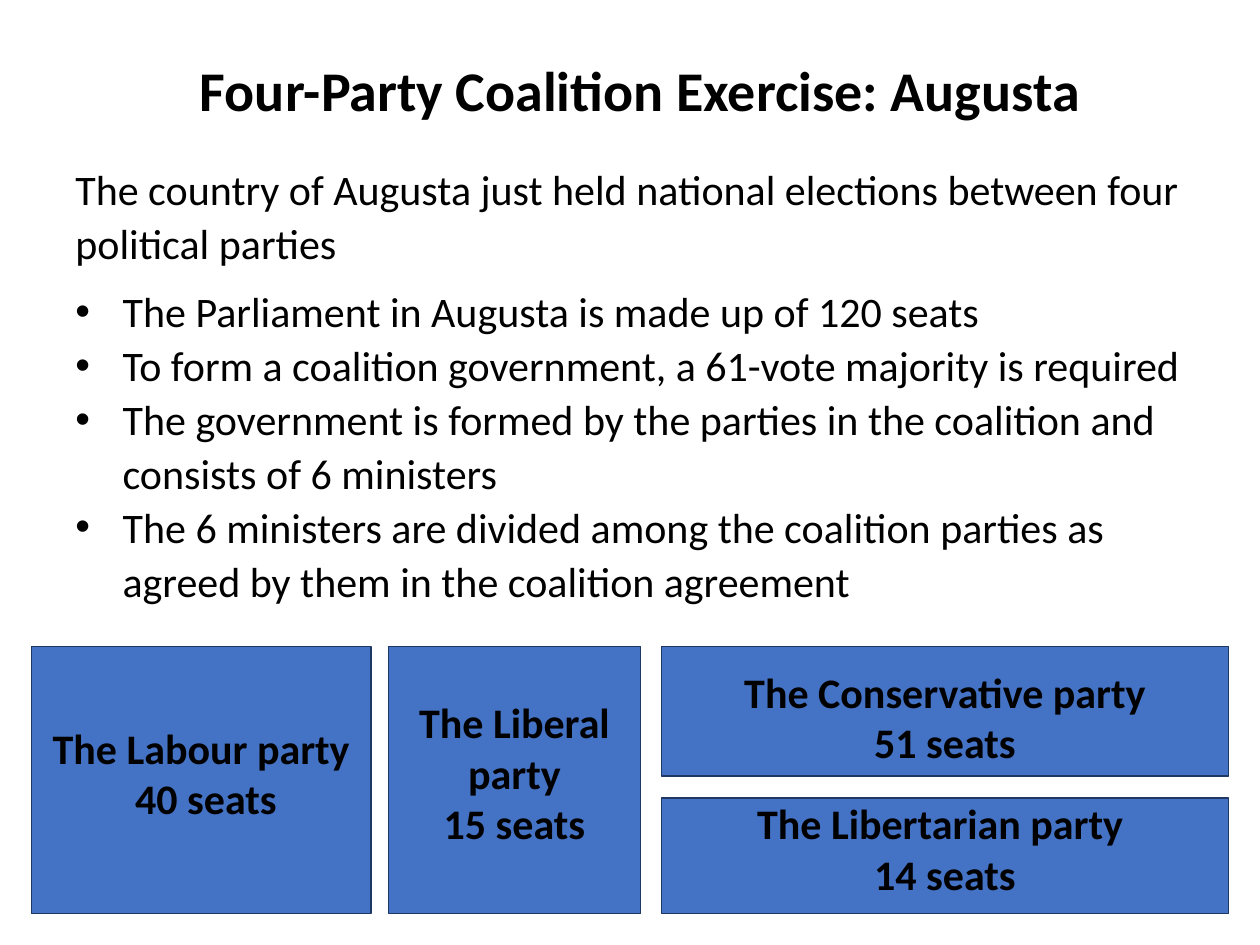
from collections import namedtuple
from dataclasses import dataclass

from lxml import etree
from pptx import Presentation
from pptx.dml.color import RGBColor
from pptx.enum.shapes import MSO_SHAPE
from pptx.enum.text import MSO_ANCHOR, PP_ALIGN
from pptx.oxml.ns import qn
from pptx.util import Pt

RECTANGLE = MSO_SHAPE.RECTANGLE
MIDDLE, TOP = MSO_ANCHOR.MIDDLE, MSO_ANCHOR.TOP
CENTER, LEFT = PP_ALIGN.CENTER, PP_ALIGN.LEFT

Box = namedtuple("Box", "left top width height")
Party = namedtuple("Party", "name seats box text_shift")


@dataclass(frozen=True)
class Theme:
    """Hold the colours, font and type sizes of the deck."""
    ink: RGBColor = RGBColor(0x00, 0x00, 0x00)
    panel: RGBColor = RGBColor(0x44, 0x72, 0xC4)
    outline: RGBColor = RGBColor(0x1F, 0x37, 0x63)
    font: str = "Calibri"
    title_size: int = 32
    text_size: int = 24


THEME = Theme()

TITLE = "Four-Party Coalition Exercise: Augusta"
INTRO = "The country of Augusta just held national elections between four political parties"
RULES = [
    "The Parliament in Augusta is made up of 120 seats",
    "To form a coalition government, a 61-vote majority is required",
    "The government is formed by the parties in the coalition and consists of 6 ministers",
    "The 6 ministers are divided among the coalition parties as agreed by them in the coalition agreement",
]


def points(box):
    """Turn a box in points into slide lengths."""
    return [Pt(length) for length in box]


def add_bullet(para, hang):
    """Give a paragraph a round bullet with a hanging indent."""
    properties = para._p.get_or_add_pPr()
    properties.set("marL", str(Pt(hang)))
    properties.set("indent", str(-Pt(hang)))
    etree.SubElement(properties, qn("a:buFont"), typeface="Arial")
    etree.SubElement(properties, qn("a:buChar"), char="•")


def write(frame, text, size=THEME.text_size, bold=False, align=LEFT,
          spacing=1.0, after=0, hang=0):
    """Write one paragraph, filling the first one if it is still empty."""
    first = frame.paragraphs[0]
    para = frame.add_paragraph() if first.runs else first
    para.alignment = align
    para.line_spacing = spacing
    para.space_after = Pt(after)
    if hang:
        add_bullet(para, hang)
    span = para.add_run()
    span.text = text
    span.font.name = THEME.font
    span.font.size = Pt(size)
    span.font.bold = bold
    span.font.color.rgb = THEME.ink


def add_text_frame(page, box, anchor):
    """Add a wrapping text box and return its frame."""
    frame = page.shapes.add_textbox(*points(box)).text_frame
    frame.word_wrap = True
    frame.vertical_anchor = anchor
    return frame


def add_title(page, box):
    """Place the centred slide title."""
    frame = add_text_frame(page, box, MIDDLE)
    write(frame, TITLE, size=THEME.title_size, bold=True, align=CENTER)


def add_rules(page, box):
    """Place the introduction and the bulleted rules."""
    frame = add_text_frame(page, box, TOP)
    write(frame, INTRO, spacing=1.07, after=8)
    for rule in RULES:
        write(frame, rule, spacing=1.07, hang=27)


def add_party(page, party):
    """Place one party panel, its text shifted from the middle."""
    panel = page.shapes.add_shape(RECTANGLE, *points(party.box))
    panel.shadow.inherit = False
    panel.fill.solid()
    panel.fill.fore_color.rgb = THEME.panel
    panel.line.color.rgb = THEME.outline
    panel.line.width = Pt(1)
    frame = panel.text_frame
    frame.word_wrap = True
    frame.vertical_anchor = MIDDLE
    frame.margin_top = Pt(max(0, 2 * party.text_shift))
    frame.margin_bottom = Pt(max(0, -2 * party.text_shift))
    for line in (party.name, party.seats):
        write(frame, line, bold=True, align=CENTER)


def add_parliament(page, box):
    """Place two tall panels and a stacked pair within the box."""
    left, top, width, height = box
    labour, liberal, stack, upper, lower = 194, 144, 324, 74, 66
    stack_left = left + width - stack
    parties = [
        Party("The Labour party", " 40 seats",
              Box(left, top, labour, height), -4.3),
        Party("The Liberal party", "15 seats",
              Box(stack_left - 12 - liberal, top, liberal, height), -4.3),
        Party("The Conservative party", "51 seats",
              Box(stack_left, top, stack, upper), 3),
        Party("The Libertarian party ", "14 seats",
              Box(stack_left, top + height - lower, stack, lower), -4.3),
    ]
    for party in parties:
        add_party(page, party)


def main():
    """Build the one-slide deck."""
    deck = Presentation()
    deck.slide_width, deck.slide_height = Pt(720), Pt(540)
    page = deck.slides.add_slide(deck.slide_layouts[6])
    add_rules(page, Box(36, 88, 648, 356))
    add_parliament(page, Box(18, 369.5, 684, 152.5))
    add_title(page, Box(42, 6, 648, 90))
    deck.save("out.pptx")


if __name__ == "__main__":
    main()
